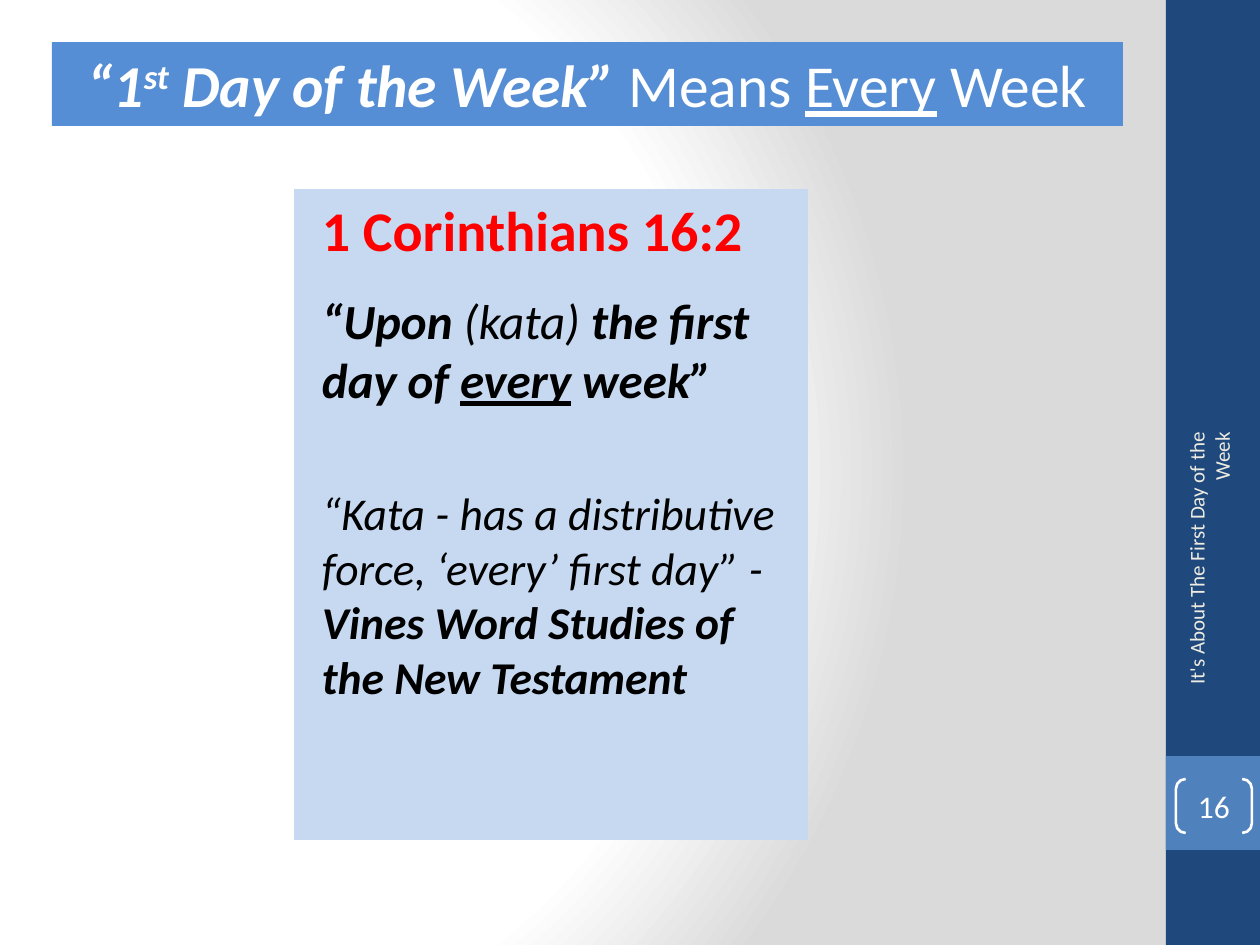
from lxml import etree
from pptx import Presentation, util as u
from pptx.dml.color import RGBColor
from pptx.enum import shapes, text
from pptx.oxml import parse_xml
from pptx.oxml.ns import nsdecls

EMU_PER_PX = 914400 // 126
COLORS = {
    "navy": "1F497D", "blue": "4F81BD", "banner": "558ED5", "panel": "C6D9F1",
    "white": "FFFFFF", "grey": "DADADA", "red": "FF0000", "black": "000000",
    "cream": "EEECE1",
}

# Runs are (text, styles): b bold, i italic, u underlined, s superscript
TITLE = [("“1", "bi"), ("st", "bis"), (" Day of the Week” ", "bi"),
         ("Means ", ""), ("Every", "u"), (" Week", "")]
# Paragraphs are (size, colour, space before, runs)
PASSAGE = [
    (32, "red", 0, [("1 Corinthians 16:2", "b")]),
    (28, "black", 16, [("“Upon ", "bi"), ("(kata) ", "i"),
                       ("the first day of ", "bi"), ("every", "biu"),
                       (" week”", "bi")]),
    (26, "black", 44, [("“Kata - has a distributive force, ‘every’ first day” - ", "i"),
                       ("Vines Word Studies of the New Testament", "bi")]),
]
PAGE_NUMBER = [("16", "")]
FOOTER = [("It's About The First Day of the Week", "")]


def px(*lengths):
    return [u.Emu(length * EMU_PER_PX) for length in lengths]


def rgb(name):
    return RGBColor.from_string(COLORS[name])


def add_shape(slide, box, fill=None, kind=shapes.MSO_SHAPE.RECTANGLE):
    shape = slide.shapes.add_shape(kind, *px(*box))
    shape.shadow.inherit = False
    shape.line.fill.background()
    if fill:
        shape.fill.solid()
        shape.fill.fore_color.rgb = rgb(fill)
    else:
        shape.fill.background()
    return shape


def write(paragraph, runs, size, color, align):
    paragraph.alignment = align
    font = paragraph.font
    font.name, font.size = "Calibri", u.Pt(size)
    font.color.rgb = rgb(color)
    for words, styles in runs:
        run = paragraph.add_run()
        run.text = words
        run.font.bold = "b" in styles
        run.font.italic = "i" in styles
        run.font.underline = "u" in styles
        if "s" in styles:
            run.font._element.set("baseline", "30000")


def set_background(slide):
    stops = [(0, "white"), (75, "white"), (100, "grey")]
    stop_xml = "".join(
        f'<a:gs pos="{position * 1000}"><a:srgbClr val="{COLORS[color]}"/></a:gs>'
        for position, color in stops)
    slide.background.fill.solid()
    properties = slide._element.cSld.bg.bgPr
    properties.replace(properties[0], parse_xml(
        f'<a:gradFill {nsdecls("a")} rotWithShape="1"><a:gsLst>{stop_xml}</a:gsLst>'
        '<a:path path="circle"><a:fillToRect l="20000" t="50000" r="100000" '
        'b="50000"/></a:path></a:gradFill>'))


def main():
    presentation = Presentation()
    presentation.slide_width, presentation.slide_height = px(1260, 945)
    slide = presentation.slides.add_slide(presentation.slide_layouts[6])
    set_background(slide)
    align, anchor = text.PP_ALIGN, text.MSO_ANCHOR

    # Side band
    add_shape(slide, (1166, 0, 94, 945), "navy")
    add_shape(slide, (1166, 756, 94, 94), "blue")

    # Title banner
    frame = add_shape(slide, (52, 42, 1071, 84), "banner").text_frame
    frame.vertical_anchor = anchor.TOP
    write(frame.paragraphs[0], TITLE, 34, "white", align.CENTER)

    # Scripture panel
    frame = add_shape(slide, (294, 189, 514, 651), "panel").text_frame
    frame.vertical_anchor = anchor.TOP
    frame.margin_left, = px(28)
    for index, (size, color, space, runs) in enumerate(PASSAGE):
        paragraph = frame.add_paragraph() if index else frame.paragraphs[0]
        paragraph.space_before = u.Pt(space)
        write(paragraph, runs, size, color, align.LEFT)

    # Page number in brackets
    bracket = add_shape(slide, (1176, 779, 76, 54), kind=shapes.MSO_SHAPE.DOUBLE_BRACKET)
    bracket.adjustments[0] = 0.18
    bracket.line.color.rgb = rgb("white")
    bracket.line.width = u.Pt(1.5)
    frame = bracket.text_frame
    frame.margin_left = frame.margin_right = frame.margin_top = frame.margin_bottom = 0
    frame.vertical_anchor = anchor.MIDDLE
    write(frame.paragraphs[0], PAGE_NUMBER, 18, "white", align.CENTER)

    # Footer running up the side band
    footer = slide.shapes.add_textbox(*px(1046, 558, 326, 50))
    footer.rotation = 270
    frame = footer.text_frame
    frame.word_wrap = True
    frame.vertical_anchor = anchor.MIDDLE
    write(frame.paragraphs[0], FOOTER, 12, "cream", align.RIGHT)

    presentation.save("out.pptx")


if __name__ == "__main__":
    main()
